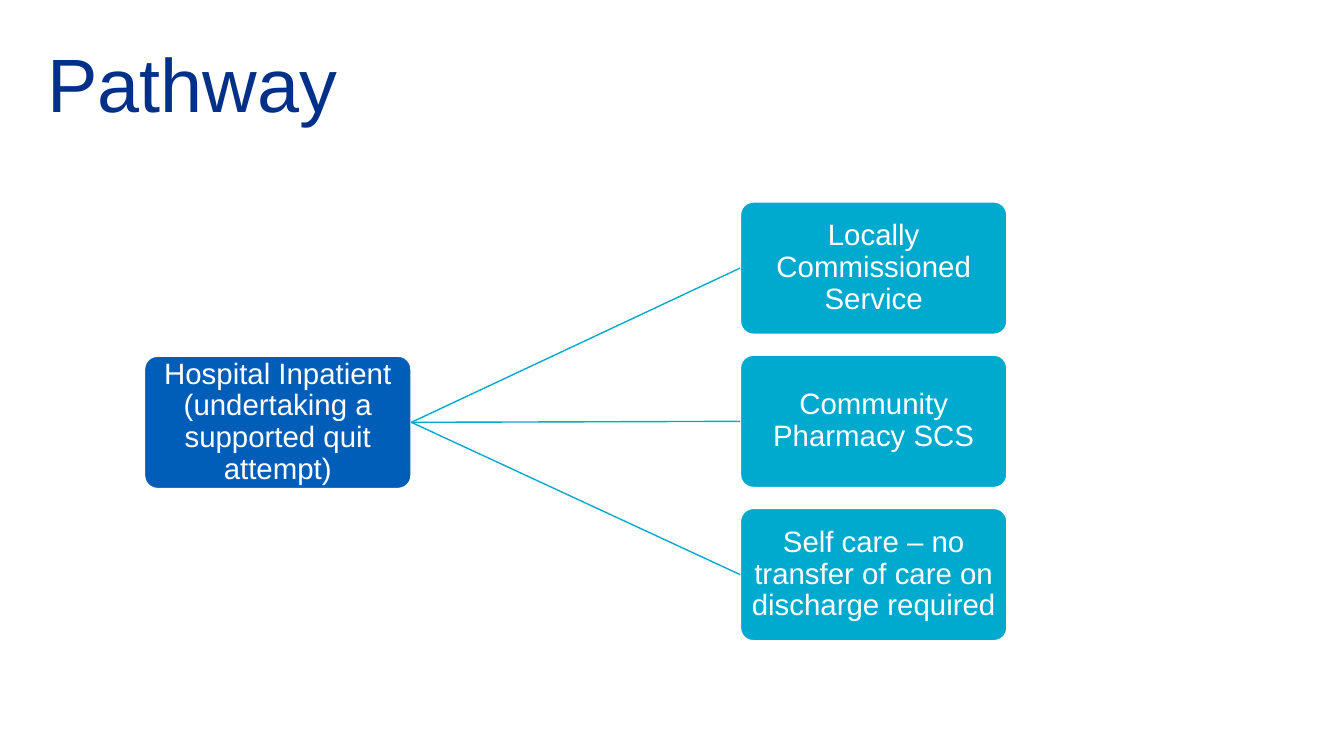
from typing import NamedTuple

from lxml.etree import SubElement
from pptx import Presentation
from pptx.dml.color import RGBColor as Rgb
from pptx.enum.shapes import MSO_CONNECTOR as Link, MSO_SHAPE as Kind
from pptx.enum.text import MSO_ANCHOR as Anchor, PP_ALIGN as Align
from pptx.oxml.ns import qn
from pptx.shapes.autoshape import Shape
from pptx.slide import Slide
from pptx.text.text import TextFrame
from pptx.util import Inches, Pt

HUES = {"navy": "003087", "blue": "005EB8", "aqua": "00A9CE", "white": "FFFFFF"}
WIDE, HIGH = 2.65, 1.32
TOP, STEP = 2.0, 1.52


class Box(NamedTuple):
    text: str
    left: float
    top: float
    hue: str


START = Box("Hospital Inpatient (undertaking a supported quit attempt)", 1.43, 3.53, "blue")
ROUTES = [
    Box(text, 7.34, TOP + row * STEP, "aqua")
    for row, text in enumerate([
        "Locally Commissioned Service",
        "Community Pharmacy SCS",
        "Self care – no transfer of care on discharge required",
    ])
]


def tint(name: str) -> Rgb:
    """Return the named colour."""
    return Rgb.from_string(HUES[name])


def write(frame: TextFrame, text: str, size: int, hue: str, align: Align, inset: float) -> None:
    """Fill a frame with one formatted run."""
    frame.word_wrap = True
    frame.margin_left = frame.margin_right = Inches(inset)
    frame.margin_top = frame.margin_bottom = Inches(inset)
    para = frame.paragraphs[0]
    para.alignment = align
    para.line_spacing = 0.9
    run = para.add_run()
    run.text = text
    run.font.name = "Arial"
    run.font.size = Pt(size)
    run.font.color.rgb = tint(hue)


def draw(slide: Slide, box: Box) -> Shape:
    """Draw one rounded step of the pathway."""
    shape = slide.shapes.add_shape(
        Kind.ROUNDED_RECTANGLE, Inches(box.left), Inches(box.top), Inches(WIDE), Inches(HIGH))
    shape.adjustments[0] = 0.1
    shape.shadow.inherit = False
    shape.fill.solid()
    shape.fill.fore_color.rgb = tint(box.hue)
    shape.line.color.rgb = tint("white")
    shape.line.width = Pt(1.5)
    shape.text_frame.vertical_anchor = Anchor.MIDDLE
    write(shape.text_frame, box.text, 21, "white", Align.CENTER, 0.05)
    return shape


def join(slide: Slide, start: Shape, end: Shape) -> None:
    """Link the right side of one step to the left side of another."""
    line = slide.shapes.add_connector(Link.STRAIGHT, 0, 0, 0, 0)
    line.begin_connect(start, 3)
    line.end_connect(end, 1)
    line.line.color.rgb = tint("aqua")
    line.line.width = Pt(1)
    SubElement(line.element.spPr, qn("a:effectLst"))


def main() -> None:
    """Build and save the pathway slide."""
    deck = Presentation()
    deck.slide_width, deck.slide_height = Inches(13.33), Inches(7.5)
    slide = deck.slides.add_slide(deck.slide_layouts[5])
    title = slide.shapes.title
    title.left, title.top = Inches(0.47), Inches(0.47)
    title.width, title.height = Inches(11.3), Inches(1.03)
    title.text_frame.vertical_anchor = Anchor.TOP
    write(title.text_frame, "Pathway", 54, "navy", Align.LEFT, 0)
    start = draw(slide, START)
    for box in ROUTES:
        join(slide, start, draw(slide, box))
    deck.save("out.pptx")


if __name__ == "__main__":
    main()
